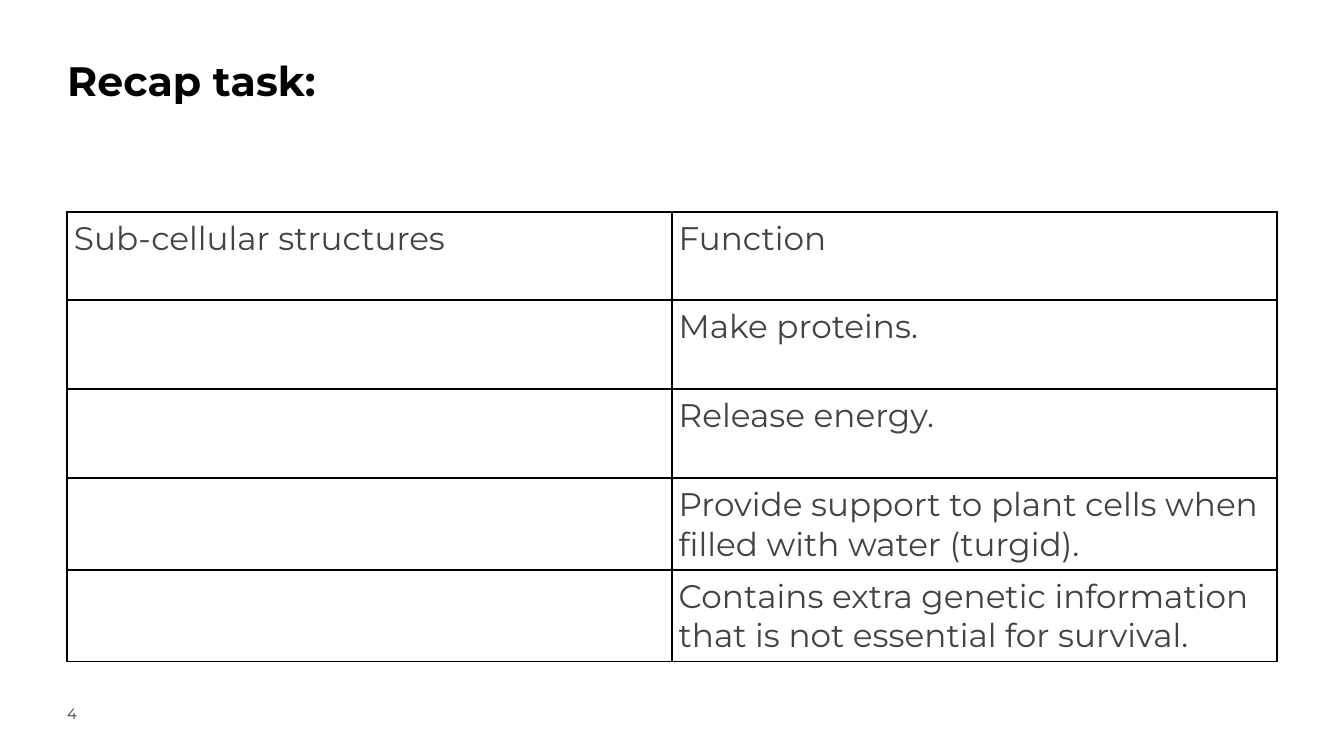
"""Build the recap slide with a table of sub-cellular structures and functions."""
from lxml.etree import SubElement
from pptx import Presentation
from pptx.dml.color import RGBColor
from pptx.enum.text import MSO_ANCHOR as Anchor, PP_ALIGN as Align
from pptx.oxml.ns import qn
from pptx.util import Inches, Pt


def style_text(paragraph, size, color, bold=False):
    paragraph.alignment = Align.LEFT
    font = paragraph.font
    font.name = "Montserrat"
    font.size = Pt(size)
    font.bold = bold
    font.color.rgb = RGBColor.from_string(color)


def set_frame(frame):
    frame.word_wrap = True
    frame.vertical_anchor = Anchor.TOP
    frame.margin_left = frame.margin_right = 0
    frame.margin_top = frame.margin_bottom = 0


presentation = Presentation()
presentation.slide_width = Inches(20)
presentation.slide_height = Inches(11.25)
slide = presentation.slides.add_slide(presentation.slide_layouts[5])

title = slide.shapes.title
title.left, title.top = Inches(1), Inches(0.71)
title.width, title.height = Inches(14.44), Inches(1.78)
title.text_frame.text = "Recap task:"
set_frame(title.text_frame)
heading = title.text_frame.paragraphs[0]
heading.line_spacing = 1.15
style_text(heading, 44, "000000", bold=True)

page_number = slide.shapes.add_textbox(Inches(1), Inches(10.48), Inches(1.57), Inches(0.39))
page_number.text_frame.text = "4"
set_frame(page_number.text_frame)
style_text(page_number.text_frame.paragraphs[0], 16, "4B3241")

rows = [
    ("Sub-cellular structures", "Function"),
    ("", "Make proteins."),
    ("", "Release energy."),
    ("", "Provide support to plant cells when filled with water (turgid)."),
    ("", "Contains extra genetic information that is not essential for survival."),
]
row_heights = [1.32, 1.32, 1.32, 1.27, 1.27]
table = slide.shapes.add_table(
    len(rows), 2, Inches(1), Inches(3.15), Inches(18), Inches(sum(row_heights))
).table
table.first_row = False
table.horz_banding = False
for column in table.columns:
    column.width = Inches(9)

for row, height, texts in zip(table.rows, row_heights, rows):
    row.height = Inches(height)
    for cell, text in zip(row.cells, texts):
        cell.text = text
        cell.vertical_anchor = Anchor.TOP
        cell.margin_left = cell.margin_right = Inches(0.1)
        cell.margin_top = cell.margin_bottom = Inches(0.1)
        style_text(cell.text_frame.paragraphs[0], 35, "434343")
        properties = cell._tc.get_or_add_tcPr()
        for edge in ("lnL", "lnR", "lnT", "lnB"):
            border = SubElement(properties, qn(f"a:{edge}"), w=str(Pt(2.25)))
            SubElement(SubElement(border, qn("a:solidFill")), qn("a:srgbClr"), val="000000")
        cell.fill.background()

presentation.save("out.pptx")
